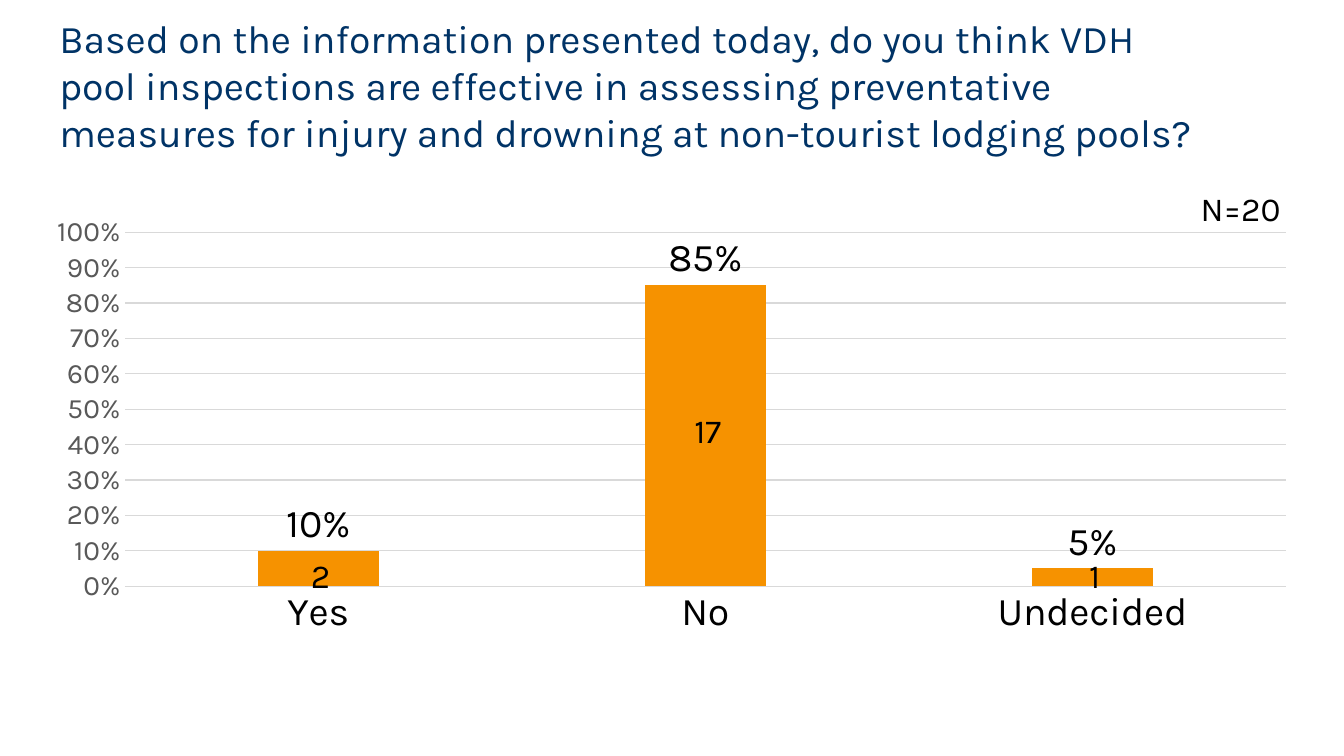
from dataclasses import dataclass

from lxml.etree import SubElement
from pptx import Presentation
from pptx.chart.data import CategoryChartData
from pptx.dml.color import RGBColor
from pptx.enum.chart import XL_CHART_TYPE, XL_LABEL_POSITION, XL_TICK_MARK
from pptx.enum.text import MSO_ANCHOR, MSO_AUTO_SIZE, PP_ALIGN
from pptx.oxml.ns import qn
from pptx.util import Cm, Pt


@dataclass(frozen=True)
class Theme:
    font: str = "Karla"
    navy: RGBColor = RGBColor(0x00, 0x33, 0x66)
    black: RGBColor = RGBColor(0x00, 0x00, 0x00)
    gray: RGBColor = RGBColor(0x59, 0x59, 0x59)
    rule: RGBColor = RGBColor(0xD9, 0xD9, 0xD9)
    orange: RGBColor = RGBColor(0xF6, 0x92, 0x00)
    large: Pt = Pt(28)
    medium: Pt = Pt(24)
    small: Pt = Pt(20)
    hairline: Pt = Pt(0.75)


@dataclass(frozen=True)
class Box:
    """A region of the slide, in centimetres."""
    left: float
    top: float
    width: float
    height: float

    def lengths(self):
        return Cm(self.left), Cm(self.top), Cm(self.width), Cm(self.height)


THEME = Theme()
QUESTION = ("Based on the information presented today, do you think VDH pool inspections "
            "are effective in assessing preventative measures for injury and drowning "
            "at non-tourist lodging pools?")
SHARES = {"Yes": 0.1, "No": 0.85, "Undecided": 0.05}
# Answer count and the top of its label, in centimetres below the chart's top
COUNTS = [("2", 8.61), ("17", 4.95), ("1", 8.61)]
# Plot area as fractions of the chart
PLOT = Box(0.075, 0.045, 0.913, 0.678)


def style_font(font, size, color):
    font.name = THEME.font
    font.size = size
    font.color.rgb = color


def style_line(line):
    line.color.rgb = THEME.rule
    line.width = THEME.hairline


def add_title(page, box, text):
    title = page.shapes.title
    title.left, title.top, title.width, title.height = box.lengths()
    frame = title.text_frame
    frame.text = text
    frame.word_wrap = True
    frame.auto_size = MSO_AUTO_SIZE.NONE
    frame.vertical_anchor = MSO_ANCHOR.MIDDLE
    para = frame.paragraphs[0]
    para.alignment = PP_ALIGN.LEFT
    style_font(para.font, THEME.large, THEME.navy)


def add_label(page, box, text):
    frame = page.shapes.add_textbox(*box.lengths()).text_frame
    frame.word_wrap = True
    frame.auto_size = MSO_AUTO_SIZE.SHAPE_TO_FIT_TEXT
    para = frame.paragraphs[0]
    para.text = text
    para.alignment = PP_ALIGN.CENTER
    style_font(para.font, THEME.medium, THEME.black)


def fix_plot_area(chart):
    """Pin the inner plot area to the PLOT fractions."""
    plot_area = chart._chartSpace.chart.plotArea
    for old in plot_area.findall(qn("c:layout")):
        plot_area.remove(old)
    layout = plot_area.makeelement(qn("c:layout"))
    plot_area.insert(0, layout)
    manual = SubElement(layout, qn("c:manualLayout"))
    settings = {"layoutTarget": "inner", "xMode": "edge", "yMode": "edge",
                "x": PLOT.left, "y": PLOT.top, "w": PLOT.width, "h": PLOT.height}
    for tag, value in settings.items():
        SubElement(manual, qn(f"c:{tag}")).set("val", str(value))


def style_axes(chart):
    category = chart.category_axis
    category.major_tick_mark = XL_TICK_MARK.NONE
    category.has_major_gridlines = False
    style_line(category.format.line)
    style_font(category.tick_labels.font, THEME.large, THEME.black)

    value = chart.value_axis
    value.minimum_scale, value.maximum_scale, value.major_unit = 0, 1, 0.1
    value.major_tick_mark = XL_TICK_MARK.NONE
    value.format.line.fill.background()
    style_line(value.major_gridlines.format.line)
    value.tick_labels.number_format = "0%"
    value.tick_labels.number_format_is_linked = False
    style_font(value.tick_labels.font, THEME.small, THEME.gray)


def style_columns(plot):
    plot.gap_width, plot.overlap = 219, -27
    plot.vary_by_categories = False
    fill = plot.series[0].format.fill
    fill.solid()
    fill.fore_color.rgb = THEME.orange
    plot.has_data_labels = True
    labels = plot.data_labels
    labels.show_value = True
    labels.number_format = "0%"
    labels.number_format_is_linked = False
    labels.position = XL_LABEL_POSITION.OUTSIDE_END
    style_font(labels.font, THEME.large, THEME.black)


def add_answer_chart(page, box):
    data = CategoryChartData(number_format="0%")
    data.categories = list(SHARES)
    data.add_series("Series 1", list(SHARES.values()))
    chart = page.shapes.add_chart(XL_CHART_TYPE.COLUMN_CLUSTERED, *box.lengths(), data).chart
    chart.has_legend = False
    chart.has_title = False
    style_font(chart.font, Pt(10), THEME.black)
    fix_plot_area(chart)
    style_axes(chart)
    style_columns(chart.plots[0])


def add_counts(page, box):
    """Centre each answer count on its column of the chart in the box."""
    width, height, nudge = 2.13, 1.27, 0.06
    step = box.width * PLOT.width / len(COUNTS)
    first = box.left + box.width * PLOT.left + step / 2 + nudge
    for index, (count, top) in enumerate(COUNTS):
        left = first + index * step - width / 2
        add_label(page, Box(left, box.top + top, width, height), count)


def build_poll_slide(deck):
    page = deck.slides.add_slide(deck.slide_layouts[5])
    chart_box = Box(0.74, 5.26, 32.05, 13.16)
    add_title(page, Box(1.24, 0.3, 29.21, 3.68), QUESTION)
    add_answer_chart(page, chart_box)
    add_counts(page, chart_box)
    add_label(page, Box(27.53, 4.62, 7.47, 1.27), "N=20")


def main():
    deck = Presentation()
    deck.slide_width, deck.slide_height = Cm(33.87), Cm(19.05)
    build_poll_slide(deck)
    deck.save("out.pptx")


if __name__ == "__main__":
    main()
